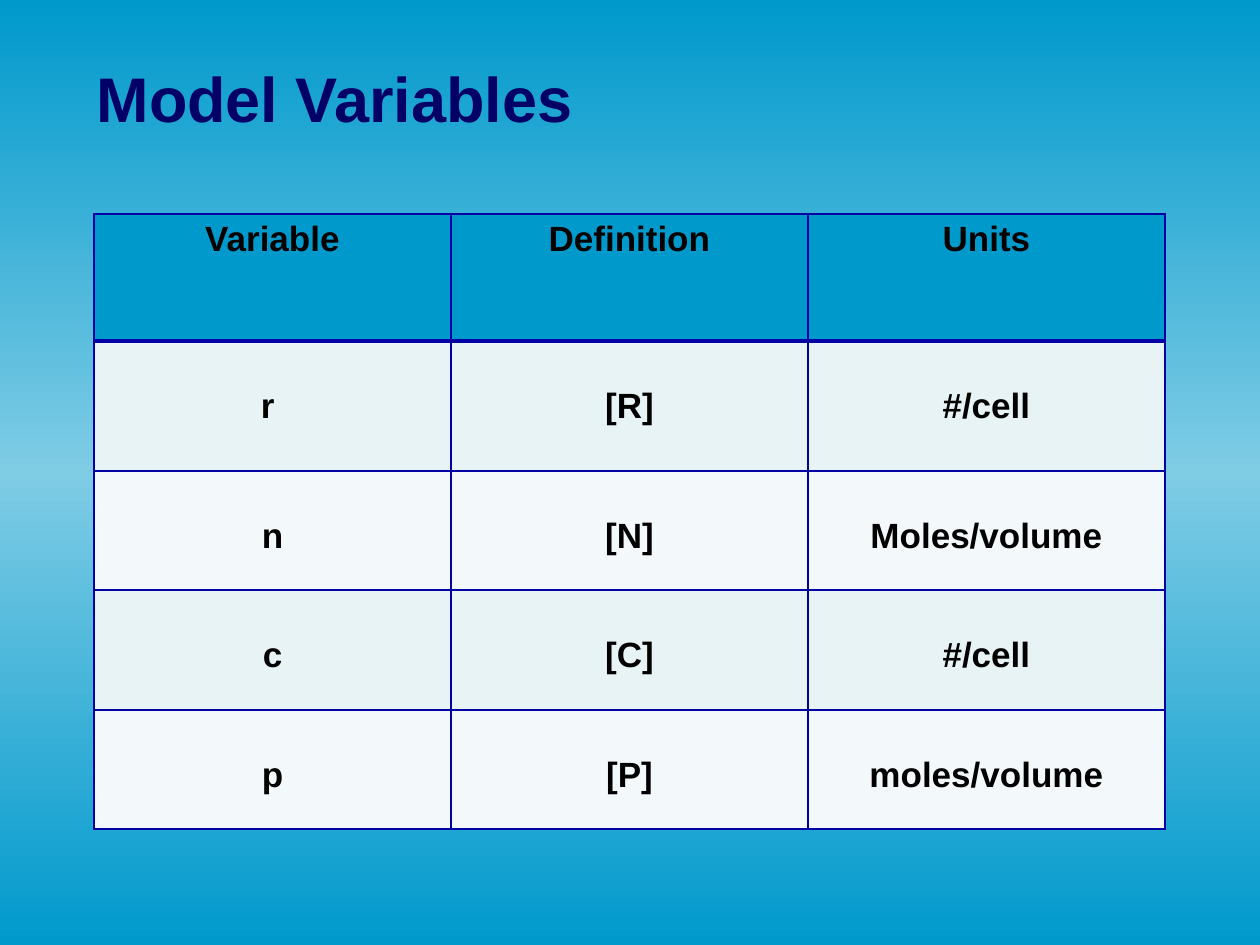
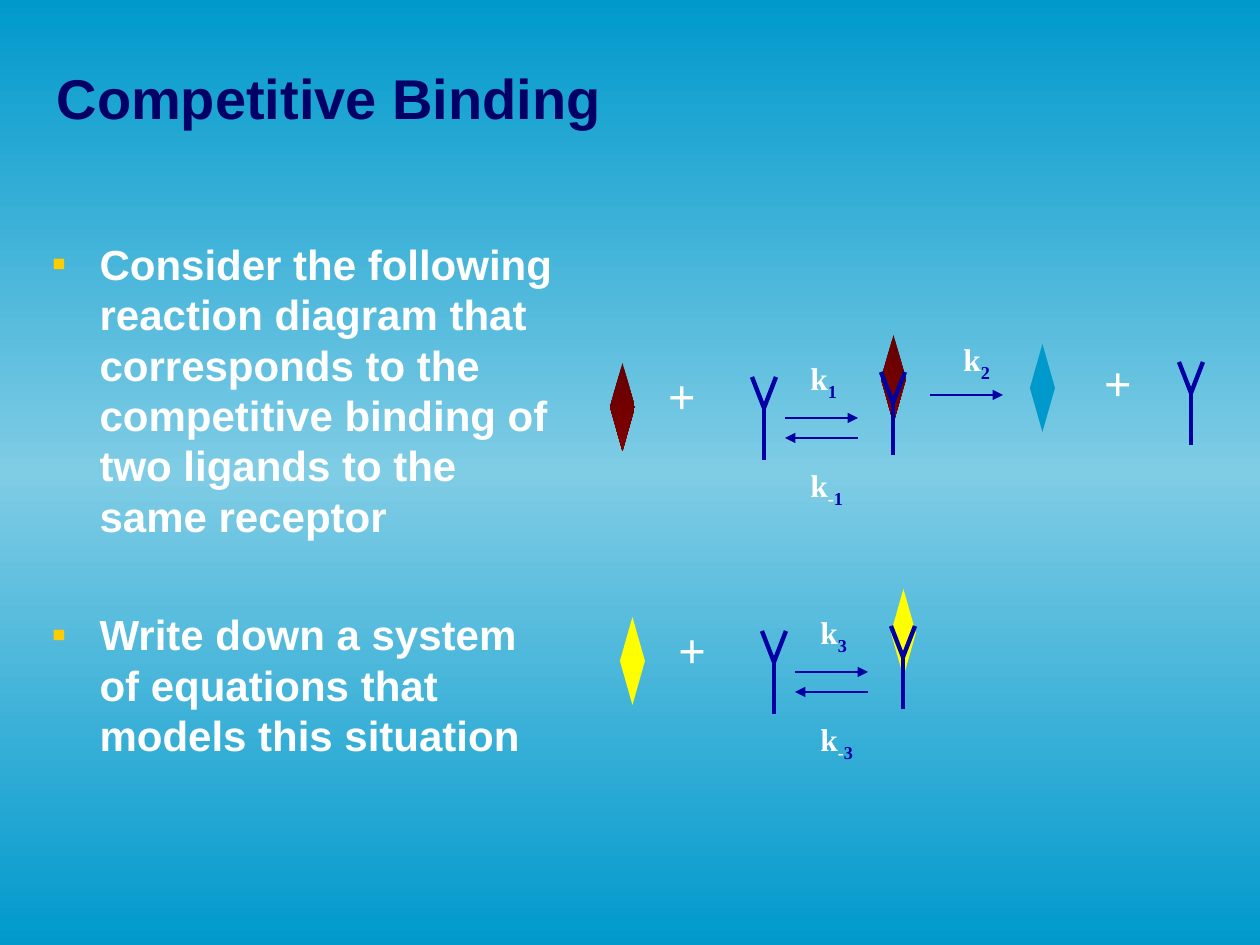
from copy import deepcopy
from dataclasses import dataclass

from lxml.etree import SubElement
from pptx import Presentation
from pptx.dml.color import RGBColor
from pptx.enum.shapes import MSO_CONNECTOR as Connector, MSO_SHAPE as Shape
from pptx.enum.text import MSO_ANCHOR as Anchor, MSO_AUTO_SIZE as AutoSize, PP_ALIGN as Align
from pptx.oxml.ns import qn
from pptx.util import Emu, Pt

PX_PER_INCH = 126


def px(length):
    return Emu(round(length * 914400 / PX_PER_INCH))


# Shared look
@dataclass(frozen=True)
class Theme:
    sky: str = "0099CC"
    sky_light: str = "7FCCE5"
    title: str = "000066"
    line: str = "0000A4"
    white: str = "FFFFFF"
    black: str = "000000"
    bullet: str = "FFCC00"
    yellow: str = "FFFF00"
    dark_red: str = "650000"
    red: str = "800000"
    row_odd: str = "E7F3F4"
    row_even: str = "F3F9FA"
    sans: str = "Arial"
    serif: str = "Times New Roman"
    body_size: int = 24
    cell_size: int = 20
    plus_size: int = 28
    label_size: int = 18


THEME = Theme()
LIGAND_SIZE = (25, 88)
LABEL_HEIGHT = 50


def rgb(color):
    return RGBColor.from_string(color)


def format_runs(paragraph, size, color, name=THEME.sans):
    for run in paragraph.runs:
        font = run.font
        font.name, font.size, font.bold = name, Pt(size), True
        font.color.rgb = rgb(color)


def fill_gradient(fill, colors):
    fill.gradient()
    fill.gradient_angle = 270
    first_stop = fill.gradient_stops[0]._gs
    for _ in colors[2:]:
        first_stop.addnext(deepcopy(first_stop))
    for index, (stop, color) in enumerate(zip(fill.gradient_stops, colors)):
        stop.position = index / (len(colors) - 1)
        stop.color.rgb = rgb(color)


# Title, list and table
def set_title(slide, text, box, size):
    title = slide.shapes.title
    title.left, title.top, title.width, title.height = map(px, box)
    frame = title.text_frame
    frame.text = text
    frame.auto_size = AutoSize.NONE
    frame.vertical_anchor = Anchor.MIDDLE
    paragraph = frame.paragraphs[0]
    paragraph.alignment = Align.LEFT
    format_runs(paragraph, size, THEME.title)


def add_bullet(paragraph):
    properties = paragraph._p.get_or_add_pPr()
    properties.set("marL", str(px(48)))
    properties.set("indent", str(-px(48)))
    color = SubElement(properties, qn("a:buClr"))
    SubElement(color, qn("a:srgbClr"), val=THEME.bullet)
    SubElement(properties, qn("a:buFont"), typeface=THEME.sans)
    SubElement(properties, qn("a:buChar"), char="▪")


def set_list(slide, items, box):
    body = slide.placeholders[1]
    body.left, body.top, body.width, body.height = map(px, box)
    frame = body.text_frame
    frame.text = "\n".join(items)
    frame.auto_size = AutoSize.NONE
    for index, paragraph in enumerate(frame.paragraphs):
        paragraph.line_spacing = Pt(28.8)
        paragraph.space_before = Pt(39 if index else 0)
        add_bullet(paragraph)
        format_runs(paragraph, THEME.body_size, THEME.white)


def set_borders(cell, widths):
    properties = cell._tc.get_or_add_tcPr()
    for side, width in zip("LRTB", widths):
        line = SubElement(properties, qn(f"a:ln{side}"), w=str(Pt(width)))
        fill = SubElement(line, qn("a:solidFill"))
        SubElement(fill, qn("a:srgbClr"), val=THEME.line)


def add_variable_table(slide, rows, left, top, column_width, row_heights):
    columns = len(rows[0])
    table = slide.shapes.add_table(
        len(rows), columns, px(left), px(top),
        px(column_width * columns), px(sum(row_heights))).table
    for column in table.columns:
        column.width = px(column_width)
    for row_index, (values, height) in enumerate(zip(rows, row_heights)):
        table.rows[row_index].height = px(height)
        if row_index == 0:
            color = THEME.sky
        else:
            color = THEME.row_odd if row_index % 2 else THEME.row_even
        for column_index, value in enumerate(values):
            cell = table.cell(row_index, column_index)
            set_borders(cell, (1, 1, 3 if row_index == 1 else 1, 3 if row_index == 0 else 1))
            cell.fill.solid()
            cell.fill.fore_color.rgb = rgb(color)
            cell.margin_top = px(46 if row_index else 6)
            cell.text = value
            paragraph = cell.text_frame.paragraphs[0]
            paragraph.alignment = Align.CENTER
            format_runs(paragraph, THEME.cell_size, THEME.black)


# Reaction parts
def add_line(shapes, start, end, width, arrow=False):
    connector = shapes.add_connector(Connector.STRAIGHT, *map(px, start + end))
    connector.line.color.rgb = rgb(THEME.line)
    connector.line.width = Pt(width)
    if arrow:
        SubElement(connector.line._get_or_add_ln(), qn("a:tailEnd"), type="triangle")
    SubElement(connector._element.spPr, qn("a:effectLst"))


def add_arrow(slide, start_x, end_x, y):
    add_line(slide.shapes, (start_x, y), (end_x, y), 1.5, arrow=True)


def add_receptor(slide, x, y):
    """Draw a Y whose arms meet at (x, y)."""
    shapes = slide.shapes.add_group_shape().shapes
    for end_x, end_y in ((x - 12, y - 31), (x + 12, y - 31), (x, y + 52)):
        add_line(shapes, (x, y), (end_x, end_y), 2.5)


def add_ligand(slide, left, top, colors):
    ligand = slide.shapes.add_shape(Shape.DIAMOND, *map(px, (left, top) + LIGAND_SIZE))
    ligand.shadow.inherit = False
    ligand.line.fill.background()
    if len(colors) > 1:
        fill_gradient(ligand.fill, colors)
    else:
        ligand.fill.solid()
        ligand.fill.fore_color.rgb = rgb(colors[0])


def add_text(slide, box, wrap=True):
    frame = slide.shapes.add_textbox(*map(px, box)).text_frame
    frame.word_wrap = wrap
    return frame.paragraphs[0]


def add_plus(slide, left, top):
    paragraph = add_text(slide, (left, top, 66, 72))
    paragraph.text = "+"
    paragraph.alignment = Align.CENTER
    format_runs(paragraph, THEME.plus_size, THEME.white, THEME.serif)


def add_rate(slide, left, top, number, sign=""):
    paragraph = add_text(slide, (left, top, 73, LABEL_HEIGHT), wrap=False)
    for text in filter(None, ("k", sign, number)):
        paragraph.add_run().text = text
    format_runs(paragraph, THEME.label_size, THEME.white, THEME.serif)
    for run in paragraph.runs[1:]:
        run._r.get_or_add_rPr().set("baseline", "-25000")
    paragraph.runs[-1].font.color.rgb = rgb(THEME.line)


def add_binding(slide, left, top, colors, number):
    """Ligand + receptor, in balance with their complex."""
    add_ligand(slide, left, top, colors)
    add_plus(slide, left + 39, top - 4)
    add_receptor(slide, left + 154, top + 45)
    add_arrow(slide, left + 175, left + 248, top + 55)
    add_arrow(slide, left + 248, left + 175, top + 75)
    add_rate(slide, left + 188, top - 10, number)
    add_rate(slide, left + 188, top + 97, number, "-")
    add_ligand(slide, left + 271, top - 28, colors)
    add_receptor(slide, left + 283, top + 40)


def add_release(slide):
    """Breakdown of the complex into product + receptor."""
    add_arrow(slide, 930, 1003, 395)
    add_rate(slide, 951, 334, "2")
    add_ligand(slide, 1030, 344, [THEME.sky])
    add_plus(slide, 1085, 346)
    add_receptor(slide, 1191, 393)


# Slides
def build_variables(presentation):
    slide = presentation.slides.add_slide(presentation.slide_layouts[5])
    set_title(slide, "Model Variables", (84, 35, 1081, 125), 36)
    rows = [
        ("Variable", "Definition", "Units"),
        ("r ", "[R]", "#/cell"),
        ("n", "[N]", "Moles/volume"),
        ("c", "[C]", "#/cell"),
        ("p", "[P]", "moles/volume"),
    ]
    add_variable_table(slide, rows, 94, 214, 357, (127, 130, 119, 120, 119))


def build_binding(presentation):
    slide = presentation.slides.add_slide(presentation.slide_layouts[1])
    set_title(slide, "Competitive Binding", (44, 18, 1138, 158), 32)
    items = [
        "Consider the following reaction diagram that corresponds to "
        "the competitive binding of two ligands to the same receptor",
        "Write down a system of equations that models this situation",
    ]
    set_list(slide, items, (39, 232, 536, 567))
    add_binding(slide, 610, 363, [THEME.dark_red, THEME.red], "1")
    add_release(slide)
    add_binding(slide, 620, 617, [THEME.yellow], "3")


def main():
    presentation = Presentation()
    presentation.slide_width, presentation.slide_height = px(1260), px(945)
    fill_gradient(presentation.slide_master.background.fill,
                  [THEME.sky, THEME.sky_light, THEME.sky])
    build_variables(presentation)
    build_binding(presentation)
    presentation.save("out.pptx")


if __name__ == "__main__":
    main()
